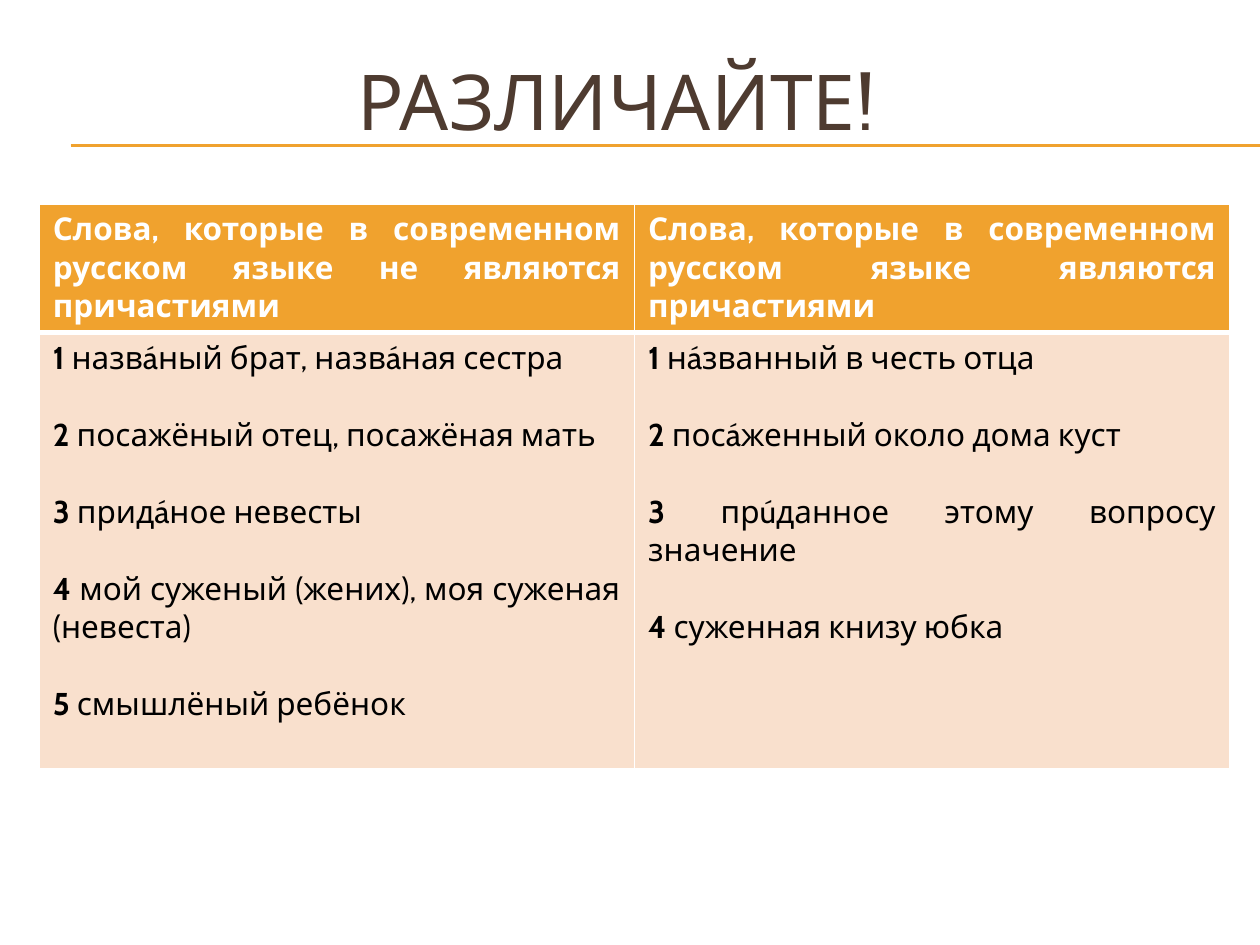
from dataclasses import dataclass

from lxml.etree import SubElement
from pptx import Presentation
from pptx.dml.color import RGBColor
from pptx.enum.shapes import MSO_CONNECTOR
from pptx.enum.text import MSO_ANCHOR as Anchor, PP_ALIGN as Align
from pptx.oxml.ns import qn
from pptx.util import Inches, Pt


@dataclass(frozen=True)
class Theme:
    """Colours, font and type sizes of the slide."""

    font: str = "Cabin"
    accent: str = "F0A22E"
    title: str = "4E3B30"
    body_fill: str = "F9E0CD"
    white: str = "FFFFFF"
    black: str = "000000"
    title_size: int = 44
    text_size: int = 18
    rule_width: float = 0.75
    border: int = 1
    header_border: int = 3
    entry_gap: int = 22


THEME = Theme()

HEADERS = [
    "Слова, которые в современном русском языке не являются причастиями",
    "Слова, которые в современном русском языке являются причастиями",
]
ENTRIES = [
    [
        "назвáный брат, назвáная сестра",
        "посажёный отец, посажёная мать",
        "придáное невесты",
        "мой суженый (жених), моя суженая (невеста)",
        "смышлёный ребёнок",
    ],
    [
        "нáзванный в честь отца",
        "посáженный около дома куст",
        "прúданное этому вопросу значение",
        "суженная книзу юбка",
    ],
]


def set_all(target, formats):
    """Set each attribute named in formats on the target."""
    for name, value in formats.items():
        setattr(target, name, value)


def add_run(paragraph, text, size, color, bold=False):
    """Add a run of text in the theme font."""
    run = paragraph.add_run()
    run.text = text
    set_all(run.font, {"name": THEME.font, "size": Pt(size), "bold": bold})
    run.font.color.rgb = RGBColor.from_string(color)


def add_rule(slide, left, top, right):
    """Draw a thin horizontal accent line."""
    rule = slide.shapes.add_connector(
        MSO_CONNECTOR.STRAIGHT, Inches(left), Inches(top), Inches(right), Inches(top)
    )
    rule.line.color.rgb = RGBColor.from_string(THEME.accent)
    rule.line.width = Pt(THEME.rule_width)
    SubElement(rule._element.spPr, qn("a:effectLst"))


def add_title(slide, left, top, width, height):
    """Place the centred title in the given box."""
    box = slide.shapes.add_textbox(Inches(left), Inches(top), Inches(width), Inches(height))
    set_all(box.text_frame, {"word_wrap": True, "vertical_anchor": Anchor.MIDDLE})
    paragraph = box.text_frame.paragraphs[0]
    paragraph.alignment = Align.CENTER
    add_run(paragraph, "РАЗЛИЧАЙТЕ!", THEME.title_size, THEME.title)


def style_cell(cell, fill, top, bottom):
    """Set the margins, fill and white borders of a cell."""
    side, edge = Inches(0.11), Inches(0.05)
    set_all(cell, {"margin_left": side, "margin_right": side,
                   "margin_top": edge, "margin_bottom": edge})
    properties = cell._tc.get_or_add_tcPr()
    widths = {"a:lnL": THEME.border, "a:lnR": THEME.border, "a:lnT": top, "a:lnB": bottom}
    for tag, width in widths.items():
        line = SubElement(properties, qn(tag), w=str(Pt(width)))
        SubElement(SubElement(line, qn("a:solidFill")), qn("a:srgbClr"), val=THEME.white)
    cell.fill.solid()
    cell.fill.fore_color.rgb = RGBColor.from_string(fill)


def fill_header(cell, text):
    """Write a bold column heading."""
    style_cell(cell, THEME.accent, THEME.border, THEME.header_border)
    paragraph = cell.text_frame.paragraphs[0]
    paragraph.alignment = Align.JUSTIFY
    add_run(paragraph, text, THEME.text_size, THEME.white, bold=True)


def fill_entries(cell, entries):
    """Write the numbered entries of a column, spaced apart."""
    style_cell(cell, THEME.body_fill, THEME.header_border, THEME.border)
    frame = cell.text_frame
    for number, entry in enumerate(entries, 1):
        paragraph = frame.paragraphs[0] if number == 1 else frame.add_paragraph()
        gap = Pt(THEME.entry_gap if number > 1 else 0)
        set_all(paragraph, {"alignment": Align.JUSTIFY, "space_before": gap})
        add_run(paragraph, f"{number} ", THEME.text_size, THEME.black, bold=True)
        add_run(paragraph, entry, THEME.text_size, THEME.black)


def add_comparison(slide, left, top, width, row_heights):
    """Place the two-column comparison table."""
    table = slide.shapes.add_table(
        len(row_heights), len(HEADERS), Inches(left), Inches(top),
        Inches(width), Inches(sum(row_heights)),
    ).table
    for row, height in zip(table.rows, row_heights):
        row.height = Inches(height)
    for index, (header, entries) in enumerate(zip(HEADERS, ENTRIES)):
        table.columns[index].width = Inches(width / len(HEADERS))
        fill_header(table.cell(0, index), header)
        fill_entries(table.cell(1, index), entries)


def main():
    """Build the slide and save it."""
    presentation = Presentation()
    set_all(presentation, {"slide_width": Inches(10), "slide_height": Inches(7.5)})
    slide = presentation.slides.add_slide(presentation.slide_layouts[6])
    for top in (1.15, 1.16):
        add_rule(slide, 0.56, top, 10)
    add_title(slide, 0.39, 0.41, 9, 0.77)
    add_comparison(slide, 0.31, 1.62, 9.45, (1.02, 3.46))
    presentation.save("out.pptx")


if __name__ == "__main__":
    main()
